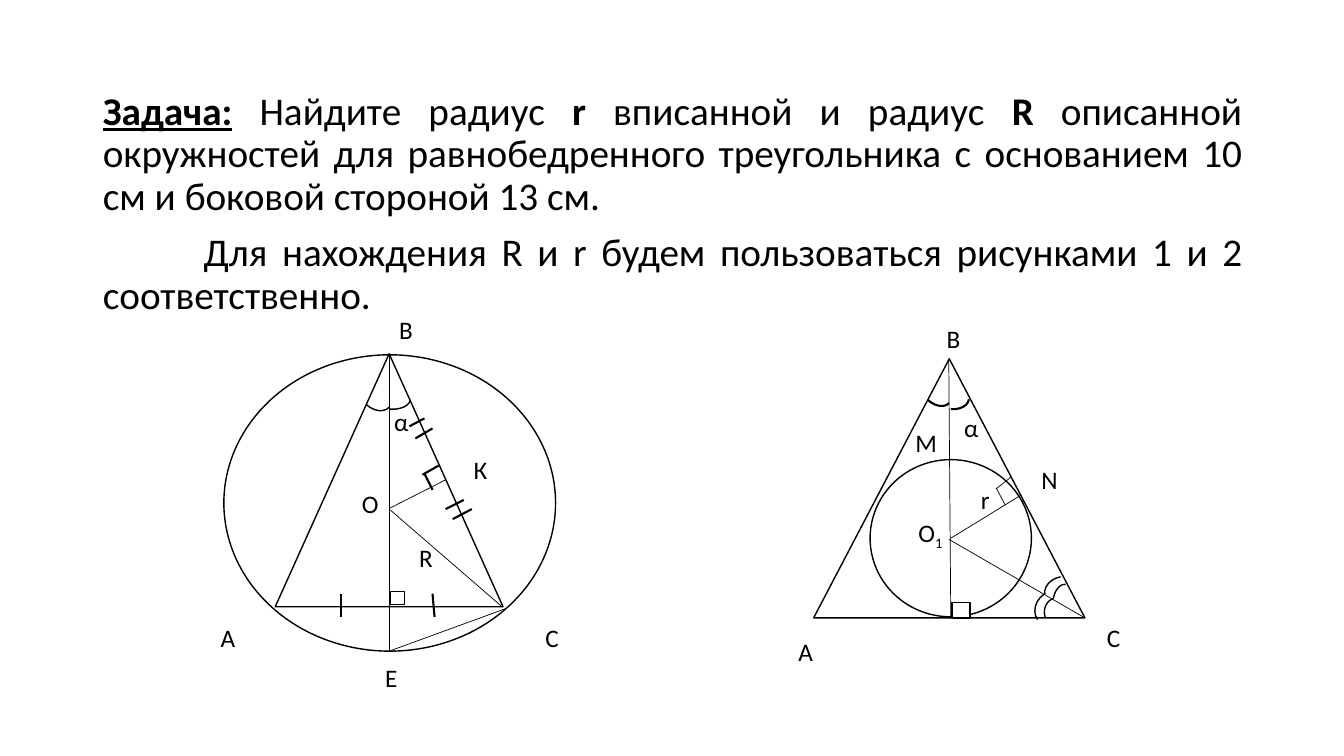
import pptx
import pptx.dml.color
import pptx.enum.shapes
import pptx.enum.text
import pptx.util
import lxml.etree
from pptx.util import Inches

SHAPES = pptx.enum.shapes.MSO_SHAPE
BLACK = "000000"
WHITE = "FFFFFF"
DRAWING = "{http://schemas.openxmlformats.org/drawingml/2006/main}"


def color(value):
    return pptx.dml.color.RGBColor.from_string(value)


def style_font(font, size):
    font.name = "Calibri"
    font.size = pptx.util.Pt(size)
    font.color.rgb = color(BLACK)


def add_outline(slide, preset, box, weight=1, filled=True):
    outline = slide.shapes.add_shape(preset, *map(Inches, box))
    outline.shadow.inherit = False
    outline.line.color.rgb = color(BLACK)
    outline.line.width = pptx.util.Pt(weight)
    if filled:
        outline.fill.solid()
        outline.fill.fore_color.rgb = color(WHITE)
    else:
        outline.fill.background()
    return outline


def add_arc(slide, box, rotation, flipped, weight):
    arc = add_outline(slide, SHAPES.ARC, box, weight, filled=False)
    arc.rotation = rotation
    if flipped:
        arc.element.spPr.find(DRAWING + "xfrm").set("flipV", "1")


def add_segment(slide, ends, weight):
    segment = slide.shapes.add_connector(
        pptx.enum.shapes.MSO_CONNECTOR.STRAIGHT, *map(Inches, ends))
    segment.line.color.rgb = color(BLACK)
    segment.line.width = pptx.util.Pt(weight)
    lxml.etree.SubElement(segment.element.spPr, DRAWING + "effectLst")


def add_label(slide, letter, x, y, width, subscript=""):
    label = slide.shapes.add_textbox(Inches(x), Inches(y), Inches(width), Inches(0.4))
    label.text_frame.word_wrap = True
    paragraph = label.text_frame.paragraphs[0]
    for text in filter(None, (letter, subscript)):
        run = paragraph.add_run()
        run.text = text
        style_font(run.font, 18)
        if text == subscript:
            run.font._element.set("baseline", "-25000")


def add_figure(slide, left, top, outlines, segments, squares, labels, arcs):
    def place(box):
        return left + box[0], top + box[1], *box[2:]

    for preset, box in outlines:
        add_outline(slide, preset, place(box))
    for weight, group in segments.items():
        for x1, y1, x2, y2 in group:
            add_segment(slide, (left + x1, top + y1, left + x2, top + y2), weight)
    for box in squares:
        add_outline(slide, SHAPES.RECTANGLE, place(box))
    for letter, x, y, width, *subscript in labels:
        add_label(slide, letter, left + x, top + y, width, *subscript)
    for box, rotation, flipped, weight in arcs:
        add_arc(slide, place(box), rotation, flipped, weight)


def add_problem(slide, left, top, width, height):
    body = slide.placeholders[1]
    body.left, body.top = Inches(left), Inches(top)
    body.width, body.height = Inches(width), Inches(height)
    frame = body.text_frame
    frame.word_wrap = True
    frame.auto_size = pptx.enum.text.MSO_AUTO_SIZE.NONE
    frame.vertical_anchor = pptx.enum.text.MSO_ANCHOR.TOP
    frame.margin_top = Inches(0.62)
    task = [
        ("Задача:", True),
        (" Найдите радиус ", False),
        ("r", True),
        (" вписанной и радиус ", False),
        ("R", True),
        (" описанной окружностей для равнобедренного треугольника "
         "с основанием 10 см и боковой стороной 13 см.", False),
    ]
    method = [("Для нахождения R и r будем пользоваться рисунками 1 и 2 "
               "соответственно.", False)]
    for index, (parts, indent, gap) in enumerate([(task, 0, 0), (method, 1, 10)]):
        paragraph = frame.add_paragraph() if index else frame.paragraphs[0]
        paragraph.alignment = pptx.enum.text.PP_ALIGN.JUSTIFY
        paragraph.line_spacing = 0.9
        paragraph.space_before = pptx.util.Pt(gap)
        properties = paragraph._p.get_or_add_pPr()
        properties.set("marL", "0")
        properties.set("indent", str(Inches(indent)))
        lxml.etree.SubElement(properties, DRAWING + "buNone")
        for text, bold in parts:
            run = paragraph.add_run()
            run.text = text
            style_font(run.font, 28)
            run.font.bold = bold
            run.font.underline = text == "Задача:"


def add_circumscribed(slide, left, top):
    add_figure(
        slide, left, top,
        outlines=[(SHAPES.OVAL, (0.22, 0.52, 3.29, 2.94)),
                  (SHAPES.FLOWCHART_EXTRACT, (0.73, 0.51, 2.26, 2.51))],
        segments={
            0.5: [(1.86, 0.51, 1.86, 3.46), (1.87, 2.04, 2.42, 1.76),
                  (1.86, 2.05, 2.98, 3.02), (1.86, 3.46, 3.01, 3.04)],
            1.5: [(1.38, 2.89, 1.38, 3.12), (2.29, 2.89, 2.31, 3.12),
                  (2.06, 1.23, 2.21, 1.15), (2.12, 1.35, 2.29, 1.25),
                  (2.42, 2.05, 2.6, 1.96), (2.49, 2.15, 2.68, 2.05),
                  (2.35, 1.62, 2.19, 1.71), (2.21, 1.7, 2.29, 1.86)],
        },
        squares=[(1.87, 2.87, 0.14, 0.13)],
        labels=[("А", 0.09, 3.12, 0.59), ("С", 3.31, 3.12, 0.55),
                ("Е", 1.72, 3.52, 0.41), ("В", 1.86, 0.07, 0.56),
                ("О", 1.49, 1.8, 0.31), ("К", 2.6, 1.46, 0.27),
                ("R", 2.06, 2.33, 0.23), ("α", 1.81, 0.98, 0.2)],
        arcs=[((1.54, 0.78, 0.37, 0.27), 42.8, True, 1),
              ((1.68, 0.84, 0.39, 0.22), 4, True, 1)])


def add_inscribed(slide, left, top):
    add_figure(
        slide, left, top,
        outlines=[(SHAPES.ISOSCELES_TRIANGLE, (0.27, 0.56, 2.69, 2.57)),
                  (SHAPES.OVAL, (0.83, 1.56, 1.6, 1.56))],
        segments={
            0.5: [(1.61, 0.56, 1.63, 3.12), (1.63, 2.34, 2.33, 1.91),
                  (2.23, 1.73, 2.08, 1.85), (2.08, 1.84, 2.17, 2.01),
                  (1.61, 2.35, 2.96, 3.13)],
        },
        squares=[(1.64, 2.98, 0.18, 0.15)],
        labels=[("А", 0.02, 3.26, 0.38), ("В", 1.49, 0.16, 0.59),
                ("N", 2.43, 1.56, 0.31), ("С", 3.08, 3.12, 0.37),
                ("M", 1.18, 1.19, 0.45), ("O", 1.21, 2.08, 0.55, "1"),
                ("r", 1.83, 1.76, 0.25), ("α", 1.69, 1.04, 0.17)],
        arcs=[((1.31, 0.76, 0.35, 0.24), 42.8, True, 1.5),
              ((1.47, 0.84, 0.34, 0.22), 4, True, 1.5),
              ((2.58, 2.86, 0.32, 0.19), 280.1, False, 1),
              ((2.48, 2.84, 0.34, 0.39), 234.8, False, 1),
              ((2.6, 2.68, 0.29, 0.37), 259.8, False, 1),
              ((2.54, 2.95, 0.31, 0.27), 251.5, False, 1)])


def main():
    presentation = pptx.Presentation()
    presentation.slide_width = Inches(13.33)
    presentation.slide_height = Inches(7.5)
    slide = presentation.slides.add_slide(presentation.slide_layouts[1])
    title = slide.shapes.title.element
    title.getparent().remove(title)
    add_problem(slide, 0.92, 0.29, 11.5, 6.79)
    add_circumscribed(slide, 2, 3)
    add_inscribed(slide, 7.8, 3)
    presentation.save("out.pptx")


if __name__ == "__main__":
    main()
